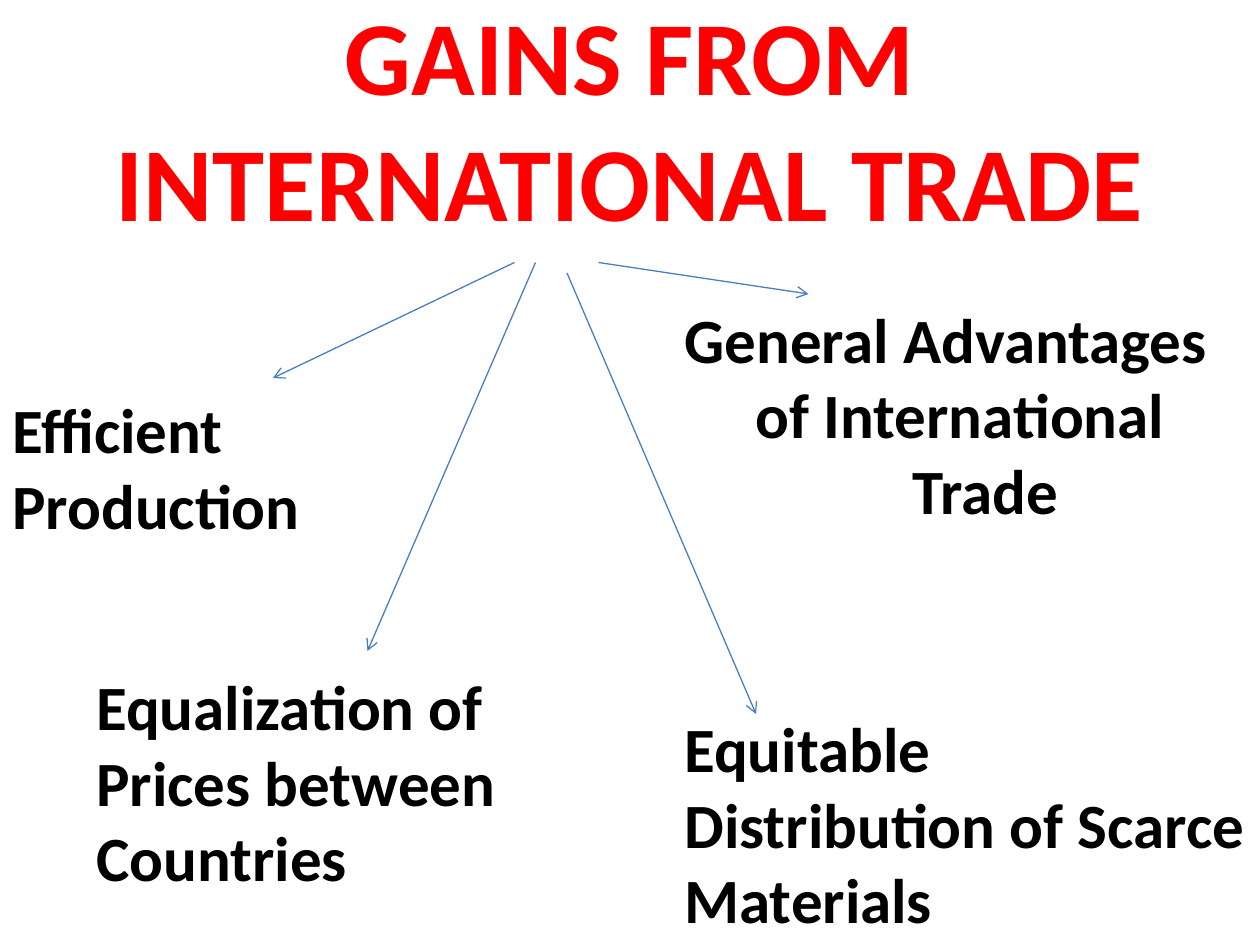
"""Build a slide on the gains from international trade."""
from lxml import etree
from pptx import Presentation
from pptx.dml.color import RGBColor
from pptx.enum.shapes import MSO_CONNECTOR
from pptx.enum.text import MSO_ANCHOR, MSO_AUTO_SIZE, PP_ALIGN
from pptx.oxml.ns import qn
from pptx.util import Inches, Pt

STRAIGHT = MSO_CONNECTOR.STRAIGHT
MIDDLE = MSO_ANCHOR.MIDDLE
FIXED, GROW = MSO_AUTO_SIZE.NONE, MSO_AUTO_SIZE.SHAPE_TO_FIT_TEXT
CENTER = PP_ALIGN.CENTER
THEME = {
    "font": "Calibri",
    "title": (60, RGBColor(255, 0, 0)),
    "body": (36, RGBColor(0, 0, 0)),
    "arrow": (0.75, RGBColor(0x4B, 0x7E, 0xBC)),
}

deck = Presentation()
deck.slide_width, deck.slide_height = Inches(10), Inches(7.5)
slide = deck.slides.add_slide(deck.slide_layouts[5])
CELL = deck.slide_width / 120


def grid(*cells):
    """Turn grid cells into lengths."""
    return [round(cell * CELL) for cell in cells]


def write(para, text, style):
    """Add one bold run in a theme style."""
    run = para.add_run()
    run.text = text
    size, color = THEME[style]
    run.font.name, run.font.size, run.font.bold = THEME["font"], Pt(size), True
    run.font.color.rgb = color


title = slide.shapes.title
title.left, title.top, title.width, title.height = grid(6, 3.6, 108, 15)
frame = title.text_frame
frame.word_wrap, frame.auto_size, frame.vertical_anchor = True, FIXED, MIDDLE
frame.paragraphs[0].alignment = CENTER
write(frame.paragraphs[0], "GAINS FROM INTERNATIONAL TRADE", "title")

arrows = [
    (49, 25, 26, 36),
    (57, 25, 77, 28),
    (51, 25, 35, 62),
    (54, 26, 72, 68),
]
for ends in arrows:
    arrow = slide.shapes.add_connector(STRAIGHT, *grid(*ends))
    width, color = THEME["arrow"]
    arrow.line.width, arrow.line.color.rgb = Pt(width), color
    etree.SubElement(arrow.line._get_or_add_ln(), qn("a:tailEnd"), type="arrow")
    etree.SubElement(arrow._element.spPr, qn("a:effectLst"))

gains = [
    ((0, 36.6, 35, 15.8), [("Efficient Production", 0)]),
    ((8, 63, 41, 23), [("Equalization of Prices between Countries", 0)]),
    ((64, 67, 56, 23), [("Equitable Distribution of Scarce Materials", 0)]),
    ((64, 28, 56, 23), [("General Advantages", 0),
                        ("of International", 6.8),
                        ("Trade", 21.7)]),
]
for place, lines in gains:
    frame = slide.shapes.add_textbox(*grid(*place)).text_frame
    frame.word_wrap, frame.auto_size = True, GROW
    for row, (text, indent) in enumerate(lines):
        para = frame.add_paragraph() if row else frame.paragraphs[0]
        if indent:
            para._p.get_or_add_pPr().set("marL", str(grid(indent)[0]))
        write(para, text, "body")

deck.save("out.pptx")
